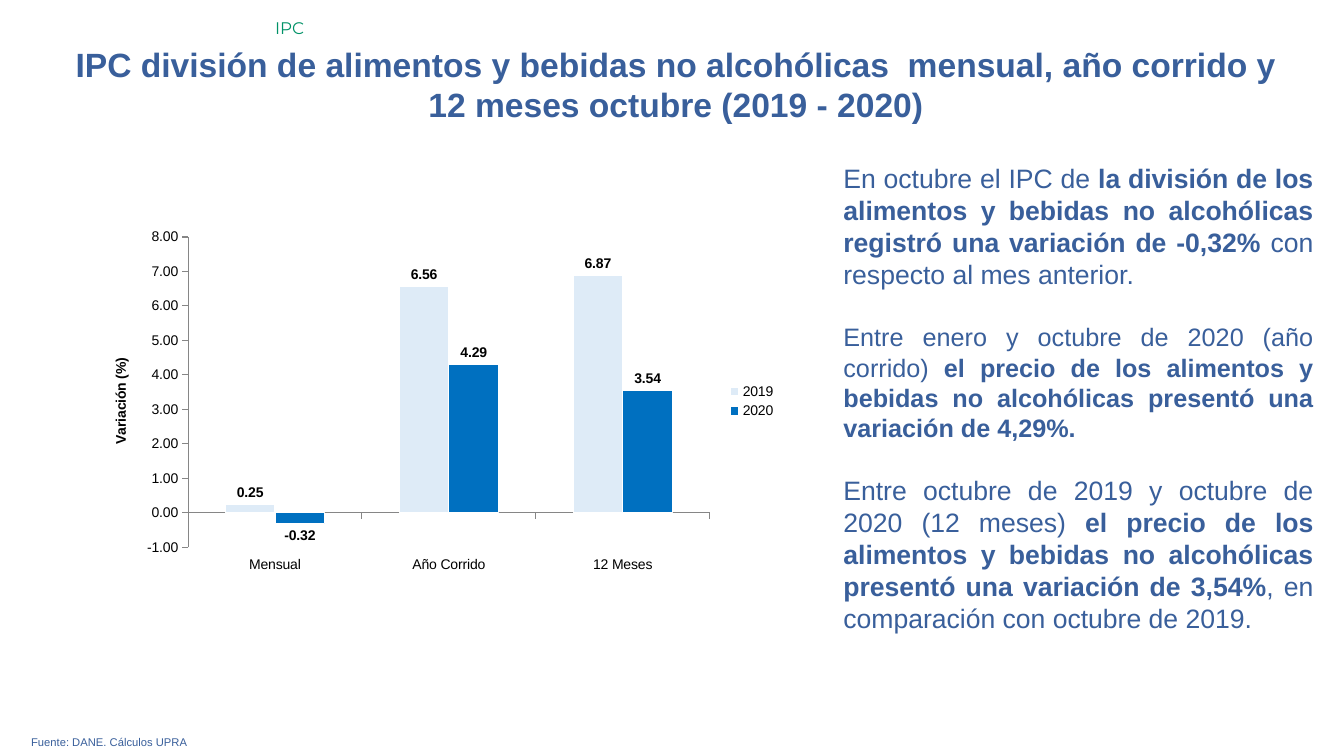
from lxml import etree
from pptx import Presentation
from pptx.chart.data import CategoryChartData
from pptx.dml.color import RGBColor
from pptx.enum.chart import (XL_CHART_TYPE, XL_LABEL_POSITION, XL_LEGEND_POSITION,
                             XL_TICK_LABEL_POSITION, XL_TICK_MARK)
from pptx.enum.text import MSO_ANCHOR, MSO_AUTO_SIZE, PP_ALIGN
from pptx.oxml.ns import qn
from pptx.util import Pt

COLUMNS = XL_CHART_TYPE.COLUMN_CLUSTERED
OUTSIDE_END = XL_LABEL_POSITION.OUTSIDE_END
LEGEND_RIGHT = XL_LEGEND_POSITION.RIGHT
LABELS_LOW = XL_TICK_LABEL_POSITION.LOW
TICK_OUTSIDE = XL_TICK_MARK.OUTSIDE
TICK_NONE = XL_TICK_MARK.NONE
TOP = MSO_ANCHOR.TOP
GROW = MSO_AUTO_SIZE.SHAPE_TO_FIT_TEXT
LEFT, CENTER, JUSTIFY = PP_ALIGN.LEFT, PP_ALIGN.CENTER, PP_ALIGN.JUSTIFY

BLUE, GREEN, BLACK, WHITE, GRAY = "395F9B", "009267", "000000", "FFFFFF", "868686"
NUMBER_FORMAT = "#,##0.00"

TITLE = ("IPC división de alimentos y bebidas no alcohólicas  mensual, "
         "año corrido y 12 meses octubre (2019 - 2020)")
# Each paragraph: size, then spans as (text, bold)
COMMENTARY = [
    (19, [("En octubre el IPC de ", False),
          ("la división de los alimentos y bebidas no alcohólicas registró "
           "una variación de -0,32% ", True),
          ("con respecto al mes anterior.", False)]),
    (18, [("Entre enero y octubre de 2020 (año corrido) ", False),
          ("el precio de los alimentos y bebidas no alcohólicas presentó "
           "una variación de 4,29%.", True)]),
    (19, [("Entre octubre de 2019 y octubre de 2020 (12 meses) ", False),
          ("el precio de los alimentos y bebidas no alcohólicas presentó "
           "una variación de 3,54%", True),
          (", en comparación con octubre de 2019.", False)]),
]
CATEGORIES = ["Mensual", "Año Corrido", "12 Meses"]
SERIES = [("2019", (0.25, 6.56, 6.87), "DEEBF7"),
          ("2020", (-0.32, 4.29, 3.54), "0070C0")]


def color(value):
    return RGBColor.from_string(value)


def set_font(font, size, value, name="Arial", bold=False):
    font.name, font.size, font.bold = name, Pt(size), bold
    font.color.rgb = color(value)


def set_frame(frame):
    frame.word_wrap = True
    frame.vertical_anchor = TOP
    frame.auto_size = GROW
    frame.margin_left = frame.margin_right = Pt(7.2)
    frame.margin_top = frame.margin_bottom = Pt(3.6)


def add_title(page, left, top, width, height):
    box = page.shapes.title
    box.left, box.top, box.width, box.height = Pt(left), Pt(top), Pt(width), Pt(height)
    set_frame(box.text_frame)
    para = box.text_frame.paragraphs[0]
    para.text = TITLE
    para.alignment = CENTER
    set_font(para.font, 24, BLUE, bold=True)


def add_text(page, left, top, width, height):
    box = page.shapes.add_textbox(Pt(left), Pt(top), Pt(width), Pt(height))
    set_frame(box.text_frame)
    return box.text_frame


def add_line(page, left, top, width, height, text, size, value, name, alignment):
    para = add_text(page, left, top, width, height).paragraphs[0]
    para.text = text
    para.alignment = alignment
    set_font(para.font, size, value, name)


def add_commentary(page, left, top, width, height):
    frame = add_text(page, left, top, width, height)
    for index, (size, spans) in enumerate(COMMENTARY):
        para = frame.add_paragraph() if index else frame.paragraphs[0]
        para.alignment = JUSTIFY
        if index:
            para.space_before = Pt(22.7)
        set_font(para.font, size, BLUE)
        for text, bold in spans:
            span = para.add_run()
            span.text = text
            set_font(span.font, size, BLUE, bold=bold)


def place_plot(chart, x, y, w, h):
    """Fix the inner plot area, in shares of the chart box."""
    plot_area = chart.plots[0]._element.getparent()
    for old in plot_area.findall(qn("c:layout")):
        plot_area.remove(old)
    layout = etree.Element(qn("c:layout"))
    manual = etree.SubElement(layout, qn("c:manualLayout"))
    settings = [("layoutTarget", "inner"), ("xMode", "edge"), ("yMode", "edge"),
                ("x", x), ("y", y), ("w", w), ("h", h)]
    for tag, value in settings:
        etree.SubElement(manual, qn("c:" + tag)).set("val", str(value))
    plot_area.insert(0, layout)


def add_price_chart(page, left, top, width, height):
    data = CategoryChartData(number_format=NUMBER_FORMAT)
    data.categories = CATEGORIES
    for name, values, _ in SERIES:
        data.add_series(name, values)
    chart = page.shapes.add_chart(COLUMNS, Pt(left), Pt(top), Pt(width),
                                  Pt(height), data).chart
    chart.has_title = False
    set_font(chart.font, 10, BLACK)
    chart.has_legend = True
    chart.legend.position = LEGEND_RIGHT
    chart.legend.include_in_layout = False

    # Columns and their labels
    plot = chart.plots[0]
    plot.gap_width, plot.overlap, plot.vary_by_categories = 150, 0, False
    for series, (_, _, fill) in zip(plot.series, SERIES):
        series.invert_if_negative = False
        series.format.fill.solid()
        series.format.fill.fore_color.rgb = color(fill)
        series.format.line.color.rgb = color(WHITE)
        series.format.line.width = Pt(0.75)
        labels = series.data_labels
        labels.show_value = True
        labels.position = OUTSIDE_END
        labels.number_format = NUMBER_FORMAT
        labels.number_format_is_linked = False
        set_font(labels.font, 10, BLACK, bold=True)

    # Axes
    for axis in (chart.category_axis, chart.value_axis):
        axis.has_major_gridlines = False
        axis.major_tick_mark, axis.minor_tick_mark = TICK_OUTSIDE, TICK_NONE
        axis.format.line.color.rgb = color(GRAY)
        axis.format.line.width = Pt(0.75)
    chart.category_axis.tick_label_position = LABELS_LOW
    values = chart.value_axis
    values.minimum_scale, values.maximum_scale, values.major_unit = -1, 8, 1
    values.tick_labels.number_format = NUMBER_FORMAT
    values.tick_labels.number_format_is_linked = False
    para = values.axis_title.text_frame.paragraphs[0]
    para.text = "Variación (%)"
    set_font(para.font, 10, BLACK, bold=True)
    place_plot(chart, 0.14, 0.04, 0.75, 0.87)


def build_price_page(deck):
    page = deck.slides.add_slide(deck.slide_layouts[5])
    add_title(page, 32.4, 27.4, 900.7, 65.5)
    add_line(page, 15.1, 522, 929.5, 17.3, "Fuente: DANE. Cálculos UPRA",
             8, BLUE, "Arial", JUSTIFY)
    add_commentary(page, 595.4, 112.3, 349.9, 370.8)
    add_line(page, 189.4, 9.4, 770.4, 21.6, "IPC", 12, GREEN, "Montserrat", LEFT)
    add_price_chart(page, 64.8, 159.1, 496.8, 254.9)


def main():
    deck = Presentation()
    deck.slide_width, deck.slide_height = Pt(960), Pt(540)
    build_price_page(deck)
    deck.save("out.pptx")


if __name__ == "__main__":
    main()
